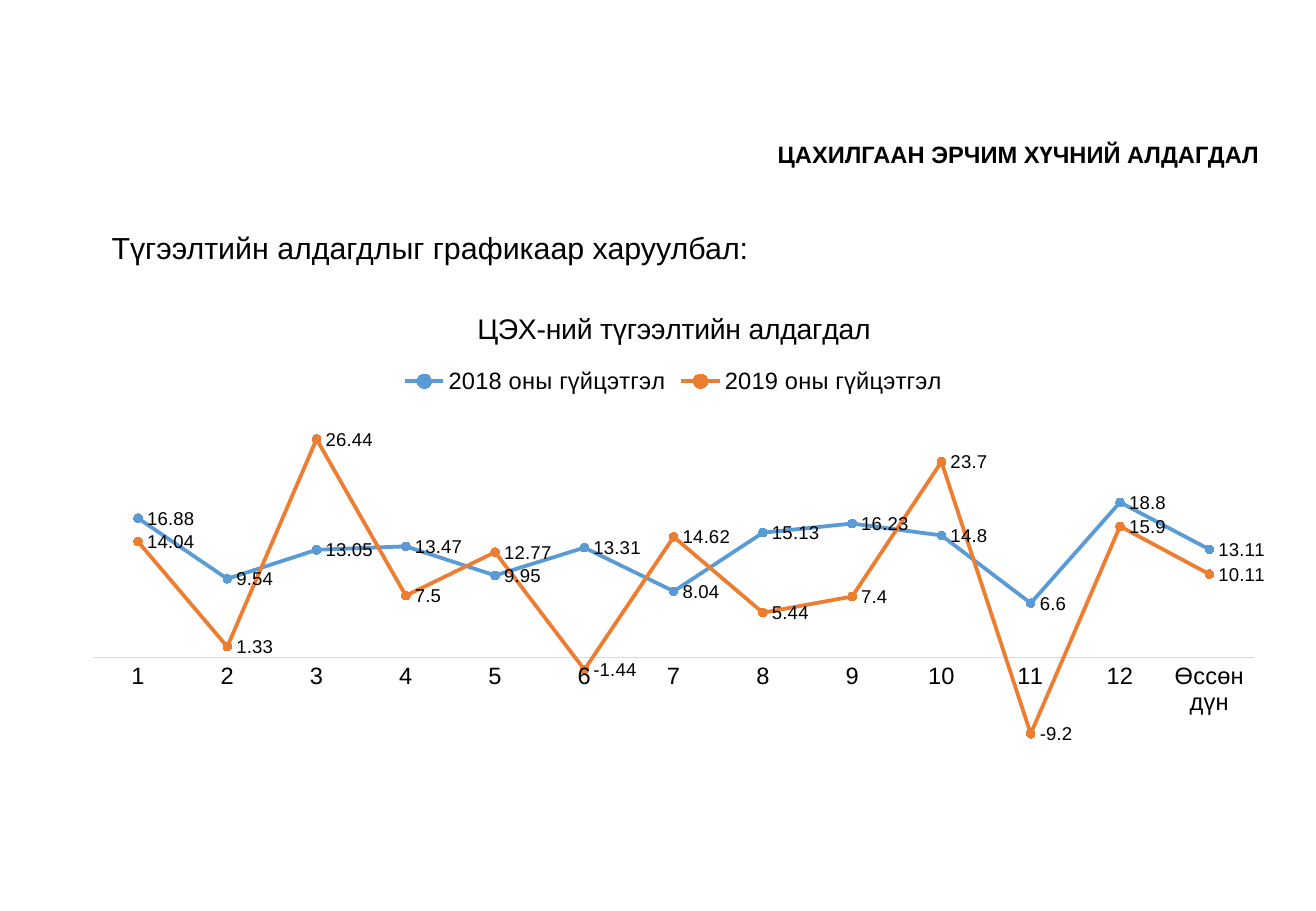
from dataclasses import dataclass

from pptx import Presentation
from pptx.chart.data import CategoryChartData
from pptx.dml.color import RGBColor
from pptx.enum.chart import (XL_CHART_TYPE, XL_LABEL_POSITION, XL_LEGEND_POSITION,
                             XL_MARKER_STYLE, XL_TICK_LABEL_POSITION, XL_TICK_MARK)
from pptx.enum.text import MSO_ANCHOR, MSO_AUTO_SIZE, PP_ALIGN
from pptx.oxml import parse_xml
from pptx.oxml.ns import nsdecls, qn
from pptx.util import Inches, Pt

SLIDE_WIDTH, SLIDE_HEIGHT = Inches(10.83), Inches(7.5)
FONT, BLACK, AXIS_GREY = "Arial", "000000", "D9D9D9"


@dataclass(frozen=True)
class Area:
    left: float
    top: float
    width: float
    height: float

    def emu(self) -> tuple[int, int, int, int]:
        return (int(SLIDE_WIDTH * self.left / 100), int(SLIDE_HEIGHT * self.top / 100),
                int(SLIDE_WIDTH * self.width / 100), int(SLIDE_HEIGHT * self.height / 100))


@dataclass(frozen=True)
class YearLosses:
    name: str
    color: str
    values: tuple[float, ...]


HEADING_AREA = Area(58.17, 14.67, 38.97, 4.53)
INTRO_AREA = Area(7.57, 24.53, 88.09, 5.33)
CHART_AREA = Area(5.26, 31.73, 91.87, 55.2)
PLOT_SHARES = {"x": 0.02, "y": 0.24, "w": 0.96, "h": 0.74}

PERIODS = [str(month) for month in range(1, 13)] + ["Өссөн дүн"]
YEARS = [
    YearLosses("2018 оны гүйцэтгэл", "5B9BD5",
               (16.88, 9.54, 13.05, 13.47, 9.95, 13.31, 8.04,
                15.13, 16.23, 14.8, 6.6, 18.8, 13.11)),
    YearLosses("2019 оны гүйцэтгэл", "ED7D31",
               (14.04, 1.33, 26.44, 7.5, 12.77, -1.44, 14.62,
                5.44, 7.4, 23.7, -9.2, 15.9, 10.11)),
]


def rgb(color: str) -> RGBColor:
    return RGBColor.from_string(color)


def style_font(font, size: float, bold: bool = False) -> None:
    font.name = FONT
    font.size = Pt(size)
    font.bold = bold
    font.color.rgb = rgb(BLACK)


def write_text(frame, text: str, size: float, bold: bool = False, wrap: bool = True) -> None:
    frame.word_wrap = wrap
    frame.auto_size = MSO_AUTO_SIZE.SHAPE_TO_FIT_TEXT
    frame.vertical_anchor = MSO_ANCHOR.TOP
    paragraph = frame.paragraphs[0]
    paragraph.alignment = PP_ALIGN.LEFT
    run = paragraph.add_run()
    run.text = text
    style_font(run.font, size, bold)


def style_year(series, year: YearLosses) -> None:
    series.smooth = False
    series.format.line.color.rgb = rgb(year.color)
    series.format.line.width = Pt(2.25)
    series.marker.style = XL_MARKER_STYLE.CIRCLE
    series.marker.size = 5
    series.marker.format.fill.solid()
    series.marker.format.fill.fore_color.rgb = rgb(year.color)
    series.marker.format.line.color.rgb = rgb(year.color)
    labels = series.data_labels
    labels.show_value = True
    labels.position = XL_LABEL_POSITION.RIGHT
    style_font(labels.font, 11)


def place_plot(chart) -> None:
    plot_area = chart.element.find(".//" + qn("c:plotArea"))
    for layout in plot_area.findall(qn("c:layout")):
        plot_area.remove(layout)
    shares = "".join(f'<c:{side} val="{share}"/>' for side, share in PLOT_SHARES.items())
    plot_area.insert(0, parse_xml(
        f'<c:layout {nsdecls("c")}><c:manualLayout><c:layoutTarget val="inner"/>'
        f'<c:xMode val="edge"/><c:yMode val="edge"/>{shares}</c:manualLayout></c:layout>'))


def add_losses_chart(slide) -> None:
    losses = CategoryChartData()
    losses.categories = PERIODS
    for year in YEARS:
        losses.add_series(year.name, year.values)
    chart = slide.shapes.add_chart(XL_CHART_TYPE.LINE_MARKERS, *CHART_AREA.emu(), losses).chart
    style_font(chart.font, 14)

    chart.has_title = True
    caption = chart.chart_title.text_frame.paragraphs[0].add_run()
    caption.text = "ЦЭХ-ний түгээлтийн алдагдал"
    style_font(caption.font, 16.8)

    chart.has_legend = True
    chart.legend.position = XL_LEGEND_POSITION.TOP
    chart.legend.include_in_layout = False
    style_font(chart.legend.font, 14)

    loss_axis = chart.value_axis
    loss_axis.minimum_scale, loss_axis.maximum_scale = -15, 30
    loss_axis.has_major_gridlines = False
    loss_axis.visible = False

    period_axis = chart.category_axis
    period_axis.major_tick_mark = XL_TICK_MARK.NONE
    period_axis.tick_label_position = XL_TICK_LABEL_POSITION.NEXT_TO_AXIS
    period_axis.format.line.color.rgb = rgb(AXIS_GREY)
    period_axis.format.line.width = Pt(0.75)
    style_font(period_axis.tick_labels.font, 14)

    chart.plots[0].vary_by_categories = False
    for series, year in zip(chart.plots[0].series, YEARS):
        style_year(series, year)
    place_plot(chart)


def main() -> None:
    presentation = Presentation()
    presentation.slide_width, presentation.slide_height = SLIDE_WIDTH, SLIDE_HEIGHT
    slide = presentation.slides.add_slide(presentation.slide_layouts.get_by_name("Title Only"))

    heading = slide.shapes.title
    heading.left, heading.top, heading.width, heading.height = HEADING_AREA.emu()
    write_text(heading.text_frame, "ЦАХИЛГААН ЭРЧИМ ХҮЧНИЙ АЛДАГДАЛ", 14, bold=True, wrap=False)

    intro = slide.shapes.add_textbox(*INTRO_AREA.emu())
    write_text(intro.text_frame, "Түгээлтийн алдагдлыг графикаар харуулбал:", 18)

    add_losses_chart(slide)
    presentation.save("out.pptx")


if __name__ == "__main__":
    main()
